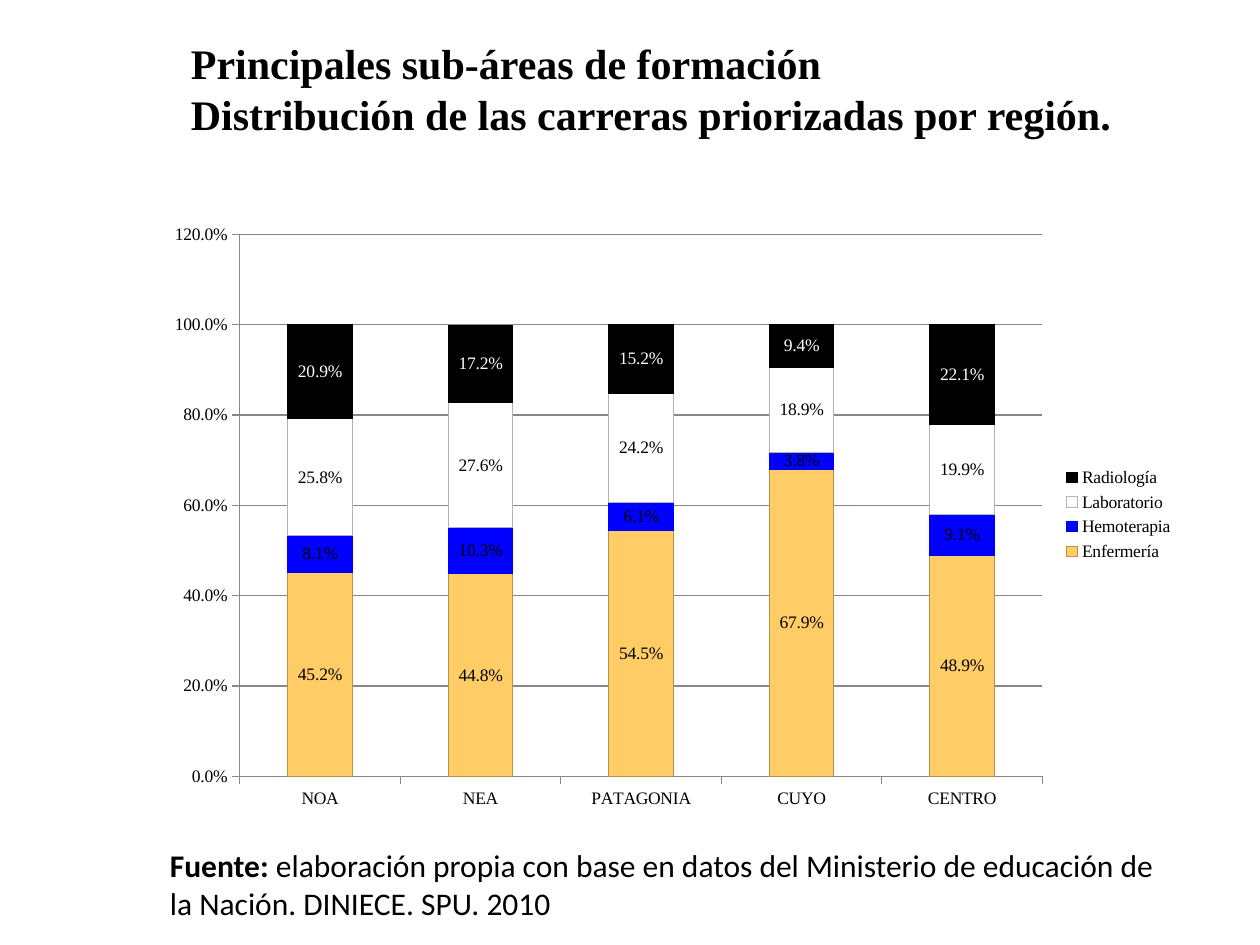
from typing import NamedTuple

from lxml.etree import SubElement
from pptx import Presentation
from pptx.chart.data import CategoryChartData
from pptx.dml.color import RGBColor
from pptx.enum.chart import XL_CHART_TYPE as ChartType
from pptx.enum.chart import XL_LEGEND_POSITION as LegendPosition
from pptx.enum.chart import XL_TICK_MARK as TickMark
from pptx.oxml.ns import qn
from pptx.util import Inches, Pt

BLACK = RGBColor(0, 0, 0)
WHITE = RGBColor(255, 255, 255)
BLUE = RGBColor(0, 0, 255)
AMBER = RGBColor(0xFF, 0xCC, 0x66)
BROWN = RGBColor(0xB8, 0x92, 0x45)
SILVER = RGBColor(0xB3, 0xB3, 0xB3)
GRAY = RGBColor(0x87, 0x87, 0x87)
SERIF, SANS = "Times New Roman", "Calibri"
PERCENT = "0.0%"

# The slide is a grid of 120 columns by 90 rows
SLIDE_WIDTH, SLIDE_HEIGHT = Inches(10), Inches(7.5)
COLUMN, ROW = SLIDE_WIDTH / 120, SLIDE_HEIGHT / 90


class Area(NamedTuple):
    column: float
    row: float
    columns: float
    rows: float

    def box(self) -> tuple[int, int, int, int]:
        return (int(self.column * COLUMN), int(self.row * ROW),
                int(self.columns * COLUMN), int(self.rows * ROW))


class Phrase(NamedTuple):
    text: str
    bold: bool


class Career(NamedTuple):
    name: str
    shares: tuple[float, ...]
    fill: RGBColor
    border: RGBColor
    label: RGBColor = BLACK


REGIONS = ("NOA", "NEA", "PATAGONIA", "CUYO", "CENTRO")
CAREERS = (
    Career("Enfermería", (0.452, 0.448, 0.545, 0.679, 0.489), AMBER, BROWN),
    Career("Hemoterapia", (0.081, 0.103, 0.061, 0.038, 0.091), BLUE, BLUE),
    Career("Laboratorio", (0.258, 0.276, 0.242, 0.189, 0.199), WHITE, SILVER),
    Career("Radiología", (0.209, 0.172, 0.152, 0.094, 0.221), BLACK, BLACK, WHITE),
)
HEADING = (
    (Phrase("Principales sub-áreas de formación", True),),
    (Phrase("Distribución de las carreras priorizadas por región.", True),),
)
SOURCE = ((
    Phrase("Fuente: ", True),
    Phrase("elaboración propia con base en datos del Ministerio de educación "
           "de la Nación. DINIECE. SPU. 2010", False),
),)


def add_text(slide, area: Area, lines: tuple, font: str, size: int) -> None:
    frame = slide.shapes.add_textbox(*area.box()).text_frame
    frame.word_wrap = True
    for index, phrases in enumerate(lines):
        line = frame.add_paragraph() if index else frame.paragraphs[0]
        for phrase in phrases:
            run = line.add_run()
            run.text = phrase.text
            run.font.name, run.font.size = font, Pt(size)
            run.font.bold = phrase.bold
            run.font.color.rgb = BLACK


def style_axis(axis) -> None:
    axis.major_tick_mark = TickMark.OUTSIDE
    axis.minor_tick_mark = TickMark.NONE
    axis.format.line.color.rgb = GRAY


def place_plot(chart, **shares: float) -> None:
    """Fix the inner plot area as shares of the chart's size."""
    plot_area = chart.plots[0]._element.getparent()
    layout = plot_area.find(qn("c:layout"))
    if layout is None:
        layout = SubElement(plot_area, qn("c:layout"))
        plot_area.insert(0, layout)
    manual = SubElement(layout, qn("c:manualLayout"))
    settings = {"layoutTarget": "inner", "xMode": "edge", "yMode": "edge", **shares}
    for tag, value in settings.items():
        SubElement(manual, qn(f"c:{tag}")).set("val", str(value))


def add_region_chart(slide, area: Area) -> None:
    data = CategoryChartData(number_format=PERCENT)
    data.categories = REGIONS
    for career in CAREERS:
        data.add_series(career.name, career.shares)
    chart = slide.shapes.add_chart(ChartType.COLUMN_STACKED, *area.box(), data).chart
    chart.has_title = False
    chart.font.name, chart.font.size = SERIF, Pt(10)
    chart.font.color.rgb = BLACK

    # Axes and gridlines
    style_axis(chart.category_axis)
    shares_axis = chart.value_axis
    style_axis(shares_axis)
    shares_axis.minimum_scale, shares_axis.maximum_scale = 0, 1.2
    shares_axis.major_unit = 0.2
    shares_axis.has_major_gridlines = True
    shares_axis.major_gridlines.format.line.color.rgb = GRAY
    shares_axis.tick_labels.number_format = PERCENT
    shares_axis.tick_labels.number_format_is_linked = False

    # Legend
    chart.has_legend = True
    chart.legend.position = LegendPosition.RIGHT
    chart.legend.include_in_layout = False

    # Columns and their labels
    plot = chart.plots[0]
    plot.gap_width, plot.overlap = 150, 100
    plot.vary_by_categories = False
    for career, series in zip(CAREERS, plot.series):
        series.invert_if_negative = False
        series.format.fill.solid()
        series.format.fill.fore_color.rgb = career.fill
        series.format.line.color.rgb = career.border
        labels = series.data_labels
        labels.show_value = True
        labels.number_format, labels.number_format_is_linked = PERCENT, False
        labels.font.name, labels.font.size = SERIF, Pt(10)
        labels.font.color.rgb = career.label
    place_plot(chart, x=0.08, y=0.04, w=0.78, h=0.89)


def main() -> None:
    deck = Presentation()
    deck.slide_width, deck.slide_height = SLIDE_WIDTH, SLIDE_HEIGHT
    slide = deck.slides.add_slide(deck.slide_layouts[6])
    add_text(slide, Area(17, 3, 94, 11), HEADING, SERIF, 24)
    add_text(slide, Area(15, 80, 98, 8.5), SOURCE, SANS, 18)
    add_region_chart(slide, Area(15, 20, 98, 58))
    deck.save("out.pptx")


if __name__ == "__main__":
    main()
